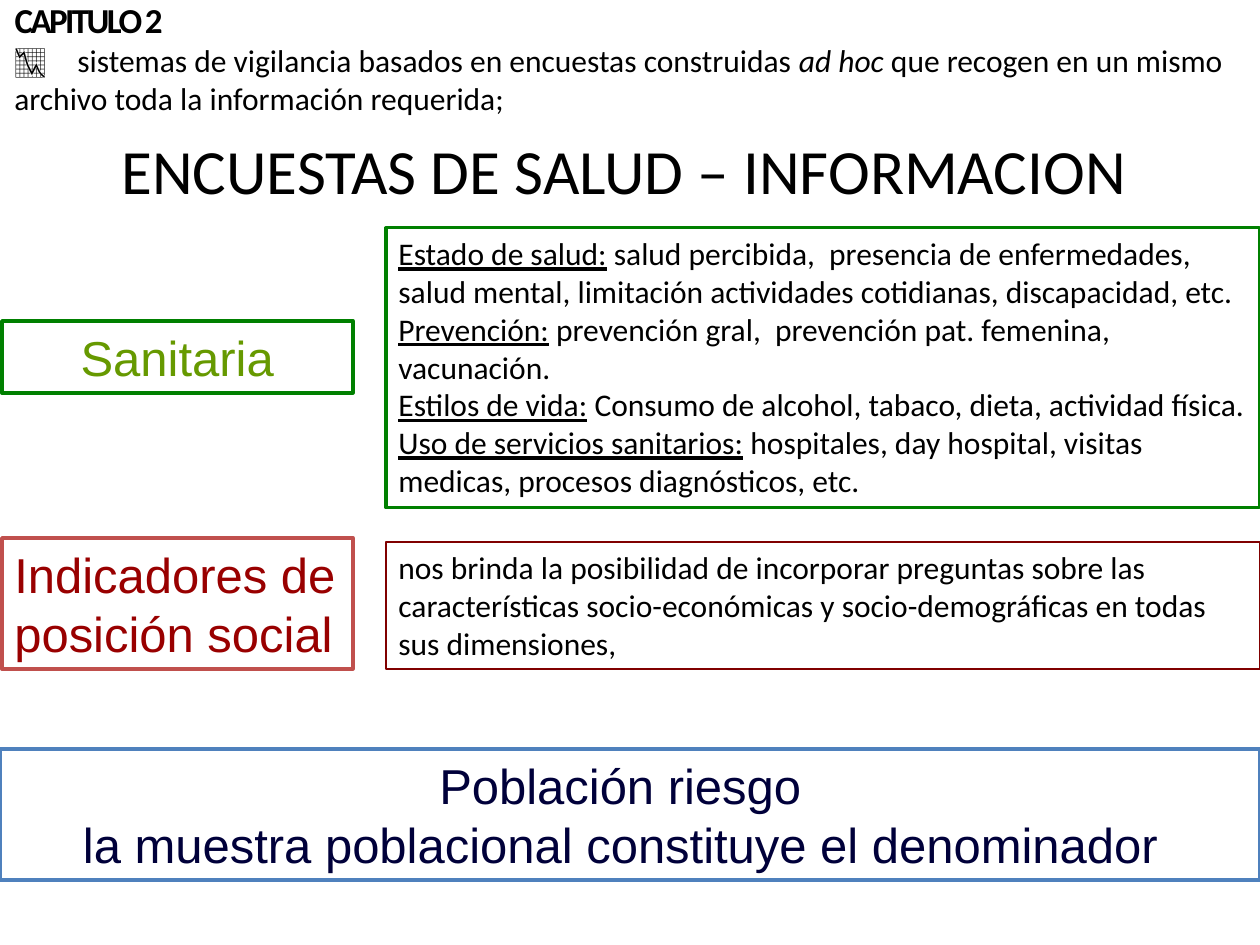
"""Build a slide on the information that health surveys provide."""
import pptx
import pptx.dml.color
import pptx.enum.shapes
import pptx.enum.text
import pptx.util
from lxml import etree

RGB = pptx.dml.color.RGBColor
ALIGN = pptx.enum.text.PP_ALIGN
ANCHOR = pptx.enum.text.MSO_ANCHOR
BLACK = RGB(0, 0, 0)
WHITE = RGB(0xFF, 0xFF, 0xFF)
GREEN = RGB(0, 0x80, 0)
OLIVE = RGB(0x66, 0x99, 0)
RED = RGB(0xC0, 0x50, 0x4D)
CRIMSON = RGB(0x99, 0, 0)
MAROON = RGB(0x80, 0, 0)
BLUE = RGB(0x4F, 0x81, 0xBD)
NAVY = RGB(0, 0, 0x3A)
LEFT_COL = (2, 351)
RIGHT_COL = (386, 874)


def px(n):
    return round(n * 914400 / 126)


def write(tf, paragraphs, size=18, font="Calibri", color=BLACK, bold=None,
          align=ALIGN.LEFT, anchor=ANCHOR.TOP, wrap=True, spacing=None, tab=None):
    """Fill a frame with paragraphs, each a list of (text, style) runs."""
    tf.word_wrap = wrap
    tf.vertical_anchor = anchor
    tf.auto_size = pptx.enum.text.MSO_AUTO_SIZE.SHAPE_TO_FIT_TEXT
    for i, runs in enumerate(paragraphs):
        p = tf.paragraphs[0] if i == 0 else tf.add_paragraph()
        p.alignment = align
        if tab:
            ns = pptx.oxml.ns.qn
            tabs = etree.SubElement(p._p.get_or_add_pPr(), ns("a:tabLst"))
            etree.SubElement(tabs, ns("a:tab"), pos=str(px(tab)), algn="l")
        for text, style in runs:
            r = p.add_run()
            r.text = text
            r.font.size = pptx.util.Pt(size)
            r.font.name = font
            r.font.color.rgb = color
            r.font.bold = bold
            r.font.italic = style == "italic"
            r.font.underline = style == "underline"
            if spacing:
                r._r.get_or_add_rPr().set("spc", str(spacing))


class Deck:
    """Hold the presentation, its current slide and the shared style."""

    def __init__(self, width, height):
        self.prs = pptx.Presentation()
        self.prs.slide_width = px(width)
        self.prs.slide_height = px(height)
        self.s = self.prs.slides.add_slide(self.prs.slide_layouts[5])

    def title(self, x, y, w, h, text, **fmt):
        sp = self.s.shapes.title
        sp.left, sp.top, sp.width, sp.height = map(px, (x, y, w, h))
        write(sp.text_frame, [[(text, "")]], **fmt)

    def text(self, x, y, w, h, paragraphs, **fmt):
        sp = self.s.shapes.add_textbox(*map(px, (x, y, w, h)))
        write(sp.text_frame, paragraphs, **fmt)

    def box(self, x, y, w, h, paragraphs, line, weight=2, fill=None, right=13, **fmt):
        sp = self.s.shapes.add_shape(
            pptx.enum.shapes.MSO_SHAPE.RECTANGLE, *map(px, (x, y, w, h)))
        sp.shadow.inherit = False
        if fill is None:
            sp.fill.background()
        else:
            sp.fill.solid()
            sp.fill.fore_color.rgb = fill
        sp.line.color.rgb = line
        sp.line.width = pptx.util.Pt(weight)
        sp.text_frame.margin_right = px(right)
        write(sp.text_frame, paragraphs, **fmt)

    def label(self, x, y, w, h, lines, line, **fmt):
        self.box(x, y, w, h, [[(t, "")] for t in lines], line, fill=WHITE,
                 size=28, font="Arial", anchor=ANCHOR.MIDDLE, **fmt)


def main():
    d = Deck(1260, 945)
    d.title(2, -8, 1239, 55, "CAPITULO 2", size=20, bold=True,
            spacing=-150, anchor=ANCHOR.MIDDLE)
    d.text(2, 35, 1258, 89, [[
        ("📉\tsistemas de vigilancia basados en encuestas construidas ", ""),
        ("ad hoc", "italic"),
        (" que recogen en un mismo archivo toda la información requerida;", ""),
    ]], tab=63)

    x, w = LEFT_COL
    d.label(x, 321, w, 72, ["Sanitaria"], GREEN, color=OLIVE, align=ALIGN.CENTER)
    d.label(x, 538, w, 131, ["Indicadores de", "posición social"], RED,
            color=CRIMSON, wrap=False)

    topics = [
        ("Estado de salud:", " salud percibida,  presencia de enfermedades, salud mental, "
         "limitación actividades cotidianas, discapacidad, etc."),
        ("Prevención:", " prevención gral,  prevención pat. femenina, vacunación."),
        ("Estilos de vida:", " Consumo de alcohol, tabaco, dieta, actividad física."),
        ("Uso de servicios sanitarios:", " hospitales, day hospital, visitas medicas, "
         "procesos diagnósticos, etc."),
    ]
    x, w = RIGHT_COL
    d.box(x, 228, w, 280, [[(head, "underline"), (body, "")] for head, body in topics],
          GREEN, weight=1.75)
    d.box(x, 542, w, 127, [[
        ("nos brinda la posibilidad de incorporar preguntas sobre las características "
         "socio-económicas y socio-demográficas en todas sus dimensiones,", ""),
    ]], MAROON, weight=1.5)

    d.label(0, 749, 1260, 131,
            ["Población riesgo", "la muestra poblacional constituye el denominador"],
            BLUE, color=NAVY, align=ALIGN.CENTER, right=32)
    d.text(21, 125, 1206, 89, [[("ENCUESTAS DE SALUD – INFORMACION", "")]],
           size=36, align=ALIGN.CENTER)
    d.prs.save("out.pptx")


if __name__ == "__main__":
    main()
